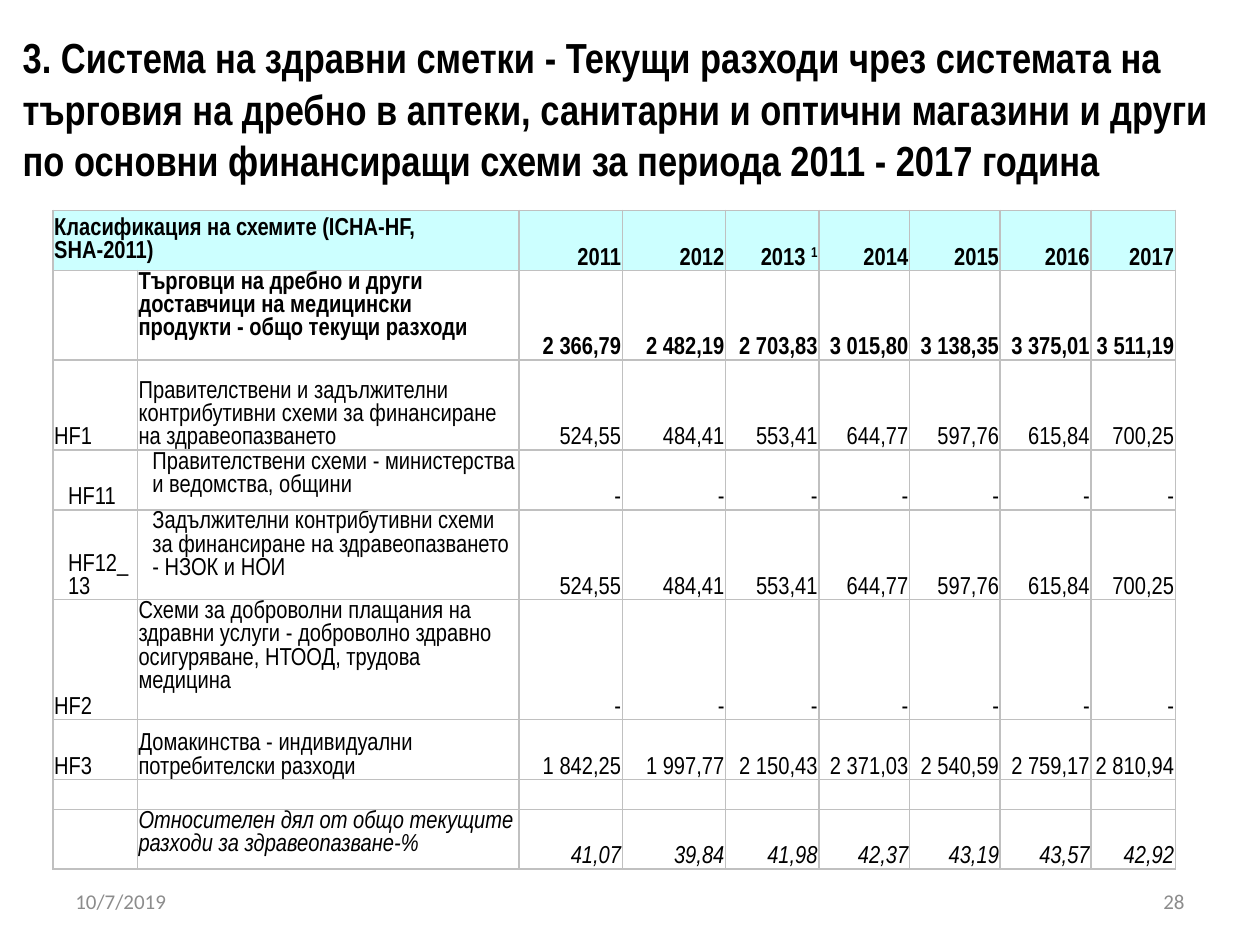
from lxml import etree
from pptx import Presentation
from pptx.dml.color import RGBColor
from pptx.enum.text import MSO_ANCHOR as Anchor, PP_ALIGN as Align
from pptx.oxml.ns import qn
from pptx.util import Inches, Pt

COLORS = {"text": "000000", "header": "CCFFFF", "grid": "C0C0C0", "footer": "8C8C8C"}
BLANK = 6
NBSP = chr(160)  # keeps a dash on the line of the word before it

# Heading table: one line of the heading in each row
HEADING_WIDTHS = [8.65, 1.1]
HEADING_LINES = [
    f"3. Система на здравни сметки{NBSP}- Текущи разходи чрез системата на",
    "търговия на дребно в аптеки, санитарни и оптични магазини и други",
    "по основни финансиращи схеми за периода 2011 - 2017 година",
]

# Expenditure table: one value per year in each row
COLUMN_WIDTHS = [0.67, 3.03, 0.82, 0.82, 0.74, 0.72, 0.72, 0.72, 0.67]
ROW_UNITS = [2, 3, 3, 2, 3, 4, 2, 1, 2]
TABLE_HEIGHT = 5.23
YEARS = ["2011", "2012", "2013 ", "2014", "2015", "2016", "2017"]
FOOTNOTED_YEAR = "2013 "
NO_SPENDING = ["-"] * len(YEARS)
COMPULSORY = ["524,55", "484,41", "553,41", "644,77", "597,76", "615,84", "700,25"]

# Code, label, yearly values, style of the row
SCHEMES = [
    ("", "Търговци на дребно и други доставчици на медицински "
         f"продукти{NBSP}- общо текущи разходи",
     ["2 366,79", "2 482,19", "2 703,83", "3 015,80", "3 138,35", "3 375,01", "3 511,19"],
     {"bold": True}),
    ("HF1", "Правителствени и задължителни контрибутивни схеми за финансиране на здравеопазването",
     COMPULSORY, {"label_anchor": Anchor.BOTTOM}),
    ("HF11", "Правителствени схеми - министерства и ведомства, общини",
     NO_SPENDING, {"indent": 0.12}),
    ("HF12_13", "Задължителни контрибутивни схеми за финансиране на здравеопазването - НЗОК и НОИ",
     COMPULSORY, {"indent": 0.12}),
    ("HF2", "Схеми за доброволни плащания на здравни услуги - доброволно здравно осигуряване, "
            "НТООД, трудова медицина", NO_SPENDING, {}),
    ("HF3", "Домакинства - индивидуални потребителски разходи",
     ["1 842,25", "1 997,77", "2 150,43", "2 371,03", "2 540,59", "2 759,17", "2 810,94"],
     {"label_anchor": Anchor.BOTTOM}),
    ("", "", [""] * len(YEARS), {}),
    ("", "Относителен дял от общо текущите разходи за здравеопазване-%",
     ["41,07", "39,84", "41,98", "42,37", "43,19", "43,57", "42,92"],
     {"italic": True}),
]


class SlideBuilder:
    """Holds the style and the current slide."""

    font_name = "Arial Narrow"
    footer_font = "Calibri"

    def __init__(self, slide):
        self.slide = slide

    def style(self, paragraph, size, color="text", name=None, bold=False, italic=False,
              align=Align.LEFT):
        font = paragraph.font
        font.name, font.size = name or self.font_name, Pt(size)
        font.bold, font.italic = bold, italic
        font.color.rgb = RGBColor.from_string(COLORS[color])
        paragraph.alignment = align

    def footer(self, text, left, align):
        box = self.slide.shapes.add_textbox(Inches(left), Inches(6.95), Inches(2.33), Inches(0.4))
        frame = box.text_frame
        frame.word_wrap, frame.vertical_anchor = True, Anchor.MIDDLE
        frame.text = text
        self.style(frame.paragraphs[0], 12, "footer", self.footer_font, align=align)

    def table(self, left, top, widths, heights):
        frame = self.slide.shapes.add_table(
            len(heights), len(widths), Inches(left), Inches(top),
            Inches(sum(widths)), Inches(sum(heights)))
        table = frame.table
        table.first_row = table.horz_banding = False
        for column, width in zip(table.columns, widths):
            column.width = Inches(width)
        for row, height in zip(table.rows, heights):
            row.height = Inches(height)
        return table

    def cell(self, cell, text, anchor=Anchor.BOTTOM, fill=None, indent=0.01, size=14,
             grid="grid", **font):
        cell.margin_left, cell.margin_bottom = Inches(indent), 0
        cell.margin_right = cell.margin_top = Inches(0.01)
        cell.vertical_anchor = anchor
        cell.text = text
        self.style(cell.text_frame.paragraphs[0], size, **font)
        self.borders(cell, grid)
        if fill:
            cell.fill.solid()
            cell.fill.fore_color.rgb = RGBColor.from_string(COLORS[fill])
        else:
            cell.fill.background()

    def borders(self, cell, color):
        properties = cell._tc.get_or_add_tcPr()
        for position, side in enumerate(("a:lnL", "a:lnR", "a:lnT", "a:lnB")):
            line = etree.Element(qn(side), w=str(Pt(1)))
            if color:
                fill = etree.SubElement(line, qn("a:solidFill"))
                etree.SubElement(fill, qn("a:srgbClr"), val=COLORS[color])
            else:
                etree.SubElement(line, qn("a:noFill"))
            properties.insert(position, line)

    def superscript(self, cell, text):
        run = cell.text_frame.paragraphs[0].add_run()
        run.text = text
        run.font._element.set("baseline", "30000")


def main():
    presentation = Presentation()
    presentation.slide_width, presentation.slide_height = Inches(10), Inches(7.5)
    builder = SlideBuilder(presentation.slides.add_slide(presentation.slide_layouts[BLANK]))

    # Heading: the long lines span both columns
    heading = builder.table(0.17, 0.33, HEADING_WIDTHS, [0.41] * len(HEADING_LINES))
    for row, line in enumerate(HEADING_LINES):
        for col, text in enumerate((line, "")):
            builder.cell(heading.cell(row, col), text, Anchor.TOP, size=24, grid=None,
                         bold=True, align=Align.JUSTIFY)
        if line != HEADING_LINES[-1]:
            heading.cell(row, 0).merge(heading.cell(row, 1))

    unit = TABLE_HEIGHT / sum(ROW_UNITS)
    expenditure = builder.table(0.42, 1.67, COLUMN_WIDTHS, [unit * n for n in ROW_UNITS])

    # Header row
    header = {"fill": "header", "bold": True}
    builder.cell(expenditure.cell(0, 0), "Класификация на схемите (ICHA-HF, SHA-2011)",
                 Anchor.MIDDLE, **header)
    builder.cell(expenditure.cell(0, 1), "", **header)
    expenditure.cell(0, 0).merge(expenditure.cell(0, 1))
    for col, year in enumerate(YEARS, 2):
        builder.cell(expenditure.cell(0, col), year, align=Align.RIGHT, **header)
        if year == FOOTNOTED_YEAR:
            builder.superscript(expenditure.cell(0, col), "1")

    # Financing schemes
    for row, (code, label, values, look) in enumerate(SCHEMES, 1):
        font = {key: look.get(key, False) for key in ("bold", "italic")}
        indent = look.get("indent", 0.01)
        builder.cell(expenditure.cell(row, 0), code, indent=indent, **font)
        builder.cell(expenditure.cell(row, 1), label, look.get("label_anchor", Anchor.TOP),
                     indent=indent, **font)
        for col, value in enumerate(values, 2):
            builder.cell(expenditure.cell(row, col), value, align=Align.RIGHT, **font)

    # Date and slide number
    builder.footer("10/7/2019", 0.5, Align.LEFT)
    builder.footer("28", 7.17, Align.RIGHT)

    presentation.save("out.pptx")


if __name__ == "__main__":
    main()
